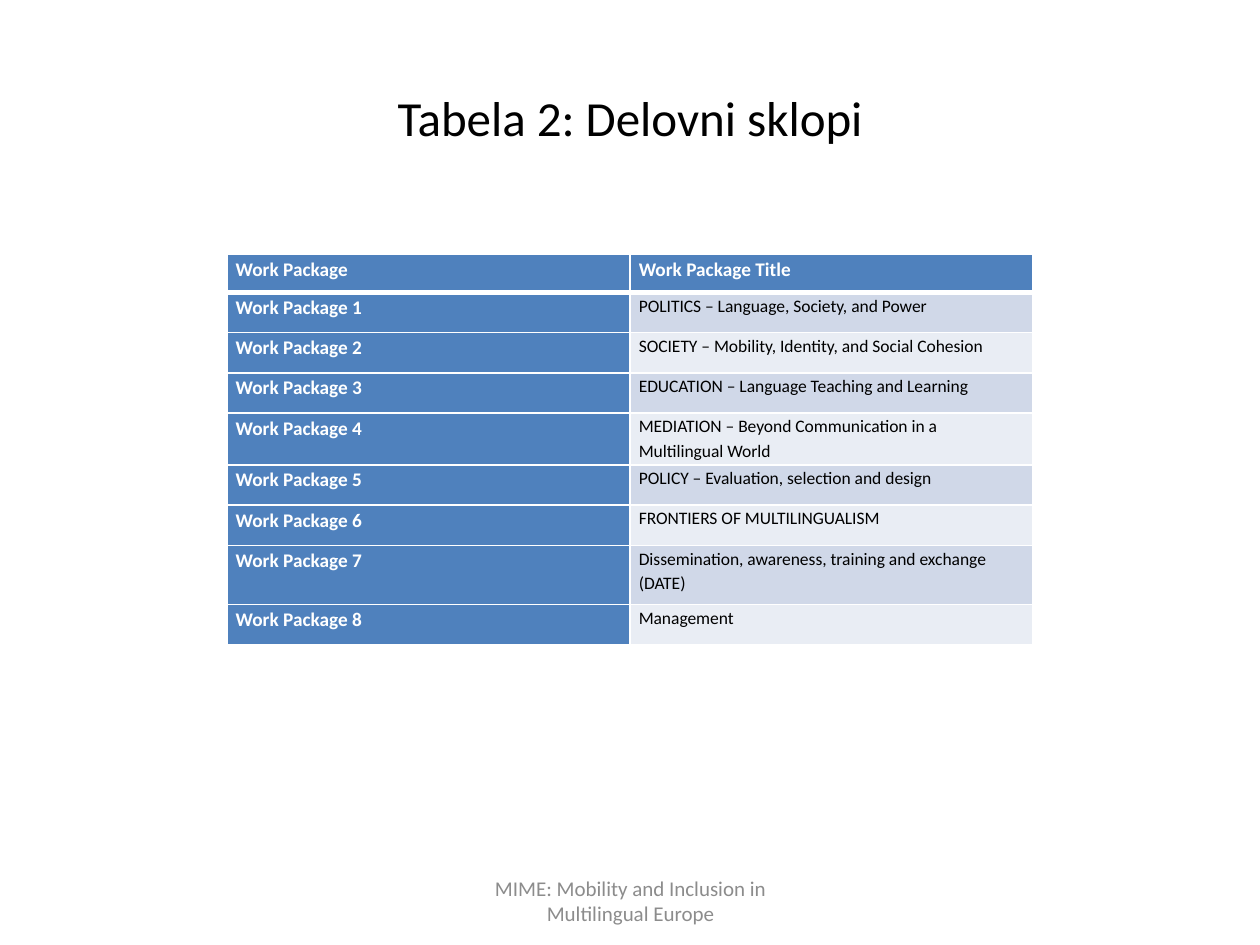
"""Build a slide with a table of work packages."""
import pptx
import pptx.dml.color
import pptx.enum.text
import pptx.oxml
import pptx.oxml.ns
import pptx.util
from pptx.util import Inches

COLORS = {
    "header": "4F81BD",
    "odd": "D0D8E8",
    "even": "E9EDF4",
    "white": "FFFFFF",
    "black": "000000",
    "footer": "8C8C8C",
}
FONT = "Calibri"
TITLES = [
    "POLITICS – Language, Society, and Power",
    "SOCIETY – Mobility, Identity, and Social Cohesion",
    "EDUCATION – Language Teaching and Learning",
    "MEDIATION – Beyond Communication in a Multilingual World",
    "POLICY – Evaluation, selection and design",
    "FRONTIERS OF MULTILINGUALISM",
    "Dissemination, awareness, training and exchange (DATE)",
    "Management",
]
ROW_HEIGHTS = [0.3, 0.32, 0.32, 0.32, 0.41, 0.32, 0.32, 0.47, 0.32]


def write_text(text_frame, text, size, color, bold=False):
    text_frame.text = text
    paragraph = text_frame.paragraphs[0]
    font = paragraph.runs[0].font
    font.name = FONT
    font.size = pptx.util.Pt(size)
    font.bold = bold
    font.color.rgb = pptx.dml.color.RGBColor.from_string(COLORS[color])
    return paragraph


def set_borders(cell, widths):
    properties = cell._tc.get_or_add_tcPr()
    for index, (side, width) in enumerate(widths.items()):
        line = pptx.oxml.parse_xml(
            f'<a:ln{side} {pptx.oxml.ns.nsdecls("a")} w="{pptx.util.Pt(width)}">'
            f'<a:solidFill><a:srgbClr val="{COLORS["white"]}"/></a:solidFill>'
            f"</a:ln{side}>"
        )
        properties.insert(index, line)


presentation = pptx.Presentation()
presentation.slide_width = Inches(10)
presentation.slide_height = Inches(7.5)
slide = presentation.slides.add_slide(presentation.slide_layouts[5])

title = slide.shapes.title
title.left, title.top = Inches(0.5), Inches(0.3)
title.width, title.height = Inches(9), Inches(1.25)
title.text_frame.vertical_anchor = pptx.enum.text.MSO_ANCHOR.MIDDLE
paragraph = write_text(title.text_frame, "Tabela 2: Delovni sklopi", 28, "black")
paragraph.alignment = pptx.enum.text.PP_ALIGN.CENTER

rows = [("Work Package", "Work Package Title")]
rows += [(f"Work Package {number}", text) for number, text in enumerate(TITLES, 1)]
table = slide.shapes.add_table(
    len(rows), 2, Inches(1.8), Inches(2.02), Inches(6.4), Inches(sum(ROW_HEIGHTS))
).table
table.first_col = True

for row_index, row in enumerate(rows):
    table.rows[row_index].height = Inches(ROW_HEIGHTS[row_index])
    for column_index, text in enumerate(row):
        cell = table.cell(row_index, column_index)
        cell.margin_left = cell.margin_right = Inches(0.07)
        cell.margin_top = cell.margin_bottom = 0
        is_header = row_index == 0 or column_index == 0
        if is_header:
            fill, size, color = "header", 11, "white"
        else:
            fill, size, color = "odd" if row_index % 2 else "even", 10, "black"
        paragraph = write_text(cell.text_frame, text, size, color, is_header)
        paragraph.line_spacing = 1.15
        cell.fill.solid()
        cell.fill.fore_color.rgb = pptx.dml.color.RGBColor.from_string(COLORS[fill])
        top = 3 if row_index == 1 else 1
        bottom = 3 if row_index == 0 else 1
        set_borders(cell, {"L": 1, "R": 1, "T": top, "B": bottom})

footer = slide.shapes.add_textbox(Inches(3.42), Inches(6.95), Inches(3.17), Inches(0.4))
footer.text_frame.word_wrap = True
footer.text_frame.vertical_anchor = pptx.enum.text.MSO_ANCHOR.MIDDLE
paragraph = write_text(
    footer.text_frame, "MIME: Mobility and Inclusion in Multilingual Europe", 12, "footer"
)
paragraph.alignment = pptx.enum.text.PP_ALIGN.CENTER

presentation.save("out.pptx")
